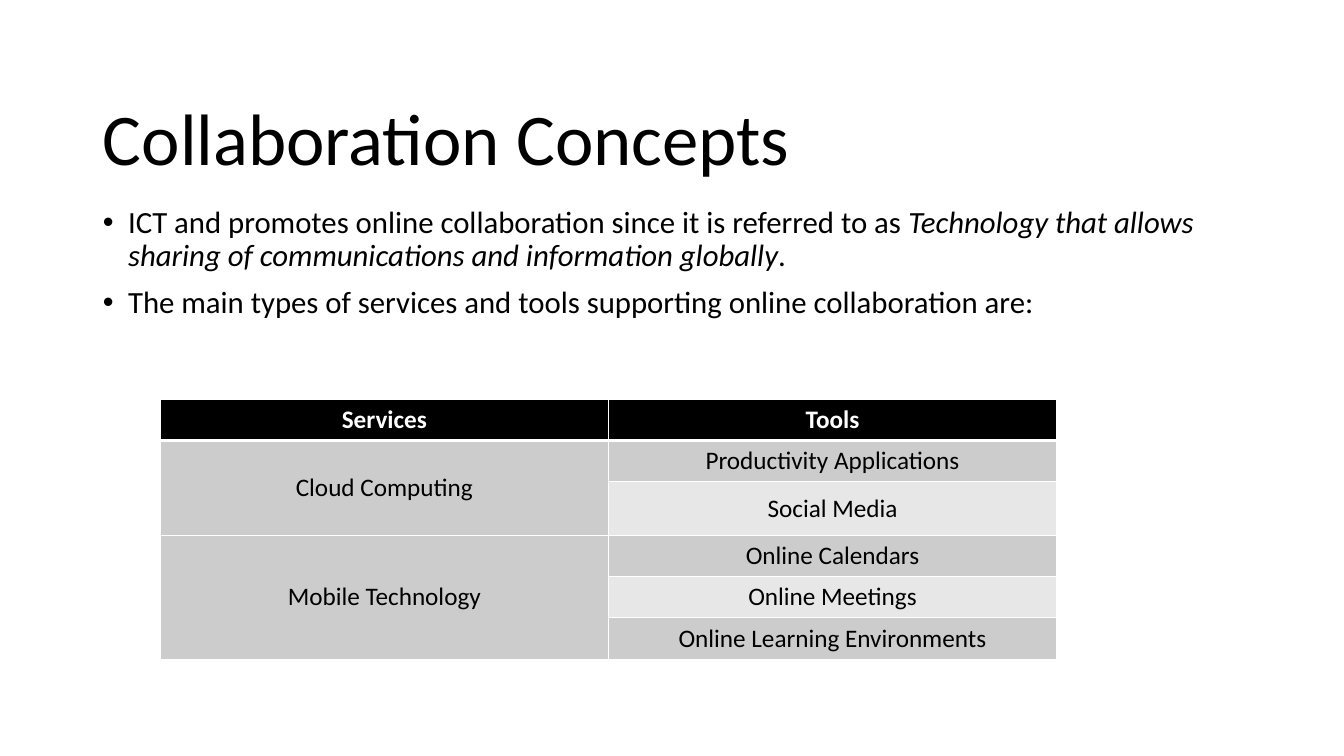
from lxml.etree import SubElement as Sub
from pptx import Presentation
from pptx.dml.color import RGBColor
from pptx.enum.text import MSO_ANCHOR as Anchor, MSO_AUTO_SIZE as Auto, PP_ALIGN as Align
from pptx.oxml.ns import qn
from pptx.util import Inches, Pt

BLACK = RGBColor(0, 0, 0)
WHITE = RGBColor(255, 255, 255)
GREY = RGBColor(0xCC, 0xCC, 0xCC)
PALE = RGBColor(0xE7, 0xE7, 0xE7)

POINTS = [
    [("ICT and promotes online collaboration since it is referred to as ", False),
     ("Technology that allows sharing of communications and information globally", True),
     (".", False)],
    [("The main types of services and tools supporting online collaboration are:", False)],
]
GROUPS = [
    ("Cloud Computing", ["Productivity Applications", "Social Media"]),
    ("Mobile Technology", ["Online Calendars", "Online Meetings", "Online Learning Environments"]),
]
HEIGHTS = [0.41, 0.41, 0.53, 0.41, 0.41, 0.41]


class Deck:
    face = "Calibri"

    def __init__(self):
        self.prs = Presentation()
        self.prs.slide_width = Inches(13.33)
        self.prs.slide_height = Inches(7.5)
        self.slide = self.prs.slides.add_slide(self.prs.slide_layouts[1])

    def style(self, run, size, color=BLACK, bold=False, slant=False):
        font = run.font
        font.name, font.size = self.face, Pt(size)
        font.bold, font.italic = bold, slant
        font.color.rgb = color

    def place(self, shape, top, height, anchor):
        shape.left, shape.top = Inches(0.92), Inches(top)
        shape.width, shape.height = Inches(11.5), Inches(height)
        frame = shape.text_frame
        frame.word_wrap = True
        frame.auto_size = Auto.NONE
        frame.vertical_anchor = anchor
        return frame

    def title(self, text):
        frame = self.place(self.slide.shapes.title, 0.4, 1.45, Anchor.BOTTOM)
        frame.text = text
        para = frame.paragraphs[0]
        para.alignment = Align.LEFT
        para.line_spacing = 0.9
        self.style(para.runs[0], 52)

    def bullets(self, points):
        frame = self.place(self.slide.placeholders[1], 2, 4.76, Anchor.TOP)
        for i, parts in enumerate(points):
            para = frame.add_paragraph() if i else frame.paragraphs[0]
            para.line_spacing = 0.9
            para.space_before = Pt(10 if i else 0)
            props = para._p.get_or_add_pPr()
            props.set("marL", str(Inches(0.25)))
            props.set("indent", str(-Inches(0.25)))
            Sub(props, qn("a:buFont")).set("typeface", "Arial")
            Sub(props, qn("a:buChar")).set("char", "•")
            for text, slant in parts:
                run = para.add_run()
                run.text = text
                self.style(run, 22, slant=slant)

    def border(self, cell, top, bottom):
        props = cell._tc.get_or_add_tcPr()
        for side, width in zip("LRTB", (1, 1, top, bottom)):
            line = Sub(props, qn(f"a:ln{side}"))
            line.set("w", str(Pt(width)))
            fill = Sub(line, qn("a:solidFill"))
            Sub(fill, qn("a:srgbClr")).set("val", str(WHITE))

    def label(self, cell, text, color, bold):
        cell.text = text
        cell.vertical_anchor = Anchor.MIDDLE
        para = cell.text_frame.paragraphs[0]
        para.alignment = Align.CENTER
        self.style(para.runs[0], 18, color, bold)

    def table(self, heads, groups, heights):
        grid = self.slide.shapes.add_table(
            len(heights), len(heads), Inches(1.59), Inches(3.96),
            Inches(8.89), Inches(sum(heights))).table
        for row, height in zip(grid.rows, heights):
            row.height = Inches(height)
        for r in range(len(heights)):
            for c in range(len(heads)):
                cell = grid.cell(r, c)
                self.border(cell, 3 if r == 1 else 1, 3 if r == 0 else 1)
                cell.fill.solid()
                shade = GREY if c == 0 or r % 2 else PALE
                cell.fill.fore_color.rgb = shade if r else BLACK
        for c, head in enumerate(heads):
            self.label(grid.cell(0, c), head, WHITE, True)
        top = 1
        for name, tools in groups:
            last = top + len(tools) - 1
            grid.cell(top, 0).merge(grid.cell(last, 0))
            self.label(grid.cell(top, 0), name, BLACK, False)
            for r, tool in enumerate(tools, top):
                self.label(grid.cell(r, 1), tool, BLACK, False)
            top = last + 1


def main():
    deck = Deck()
    deck.title("Collaboration Concepts")
    deck.bullets(POINTS)
    deck.table(["Services", "Tools"], GROUPS, HEIGHTS)
    deck.prs.save("out.pptx")


if __name__ == "__main__":
    main()
